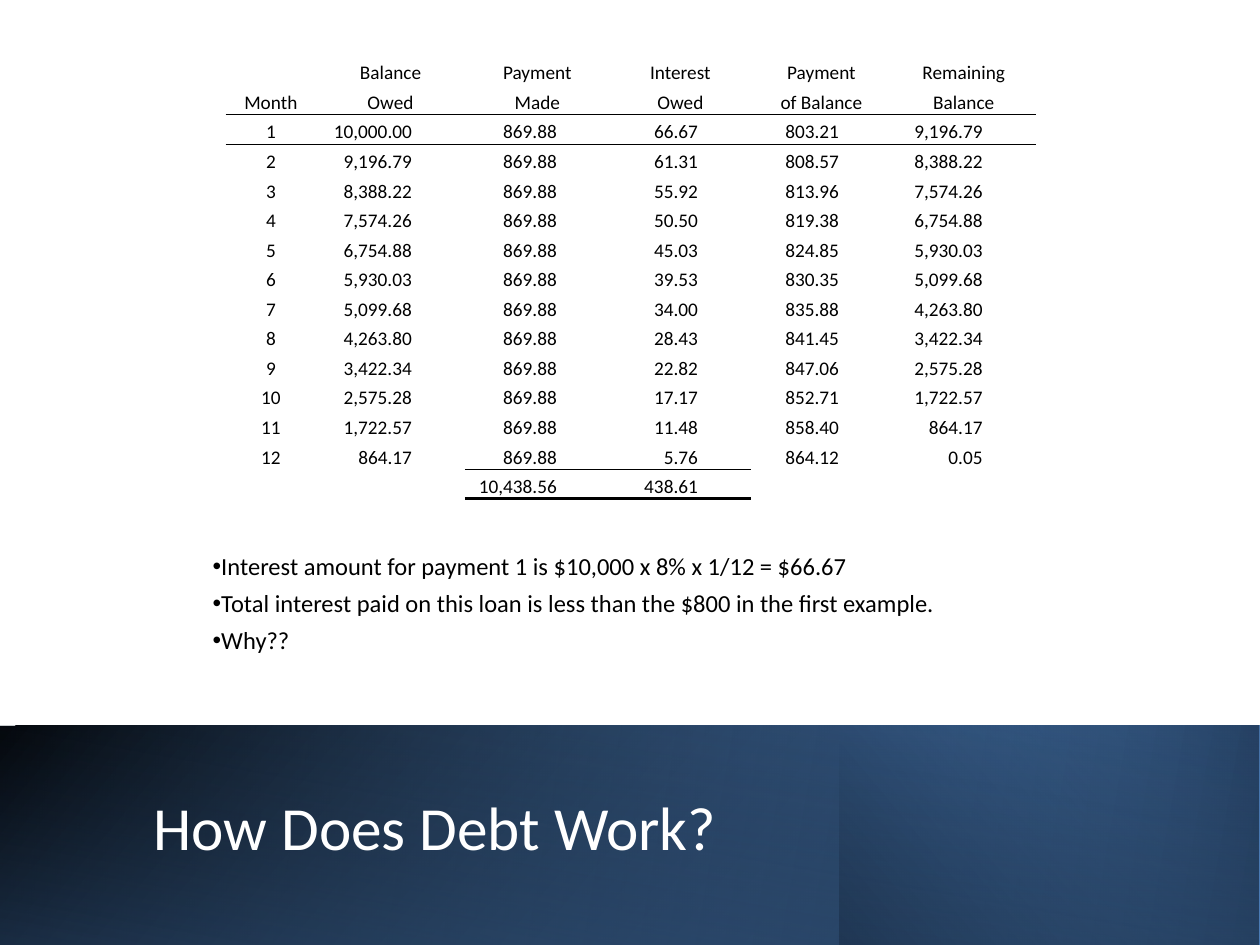
from lxml.etree import SubElement
from pptx import Presentation
from pptx.dml.color import RGBColor
from pptx.enum.shapes import MSO_SHAPE
from pptx.enum.text import MSO_ANCHOR, PP_ALIGN
from pptx.oxml.ns import qn
from pptx.util import Inches, Pt


def color(hex_value):
    return RGBColor.from_string(hex_value)


def apply_format(target, values):
    for name, value in values.items():
        setattr(target, name, value)


presentation = Presentation()
apply_format(presentation, {"slide_width": Inches(10), "slide_height": Inches(7.5)})
slide = presentation.slides.add_slide(presentation.slide_layouts[6])
column = presentation.slide_width / 100
row = presentation.slide_height / 100

bands = [
    ((0, 76.8, 100, 23.2), 0, 140, [(0, "000000", 100), (1, "4F81BD", 100)]),
    ((0, 76.8, 99.9, 23.2), 0, 170, [(0, "4F81BD", 0), (1, "254061", 100)]),
    ((66.6, 76.8, 33.4, 23.2), 0, 220, [(0, "254061", 100), (1, "4F81BD", 0)]),
    ((-0.1, 76.8, 100, 23.3), 180, 280, [(0, "000000", 0), (0.99, "254061", 55)]),
]
for (left, top, width, height), rotation, angle, stops in bands:
    band = slide.shapes.add_shape(
        MSO_SHAPE.RECTANGLE, int(left * column), int(top * row),
        int(width * column), int(height * row))
    band.shadow.inherit = False
    band.line.fill.background()
    band.rotation = rotation
    if not rotation:
        band._element.spPr.find(qn("a:xfrm")).set("flipH", "1")
    band.fill.gradient()
    band.fill.gradient_angle = 360 - angle
    for stop, (position, hex_value, _) in zip(band.fill.gradient_stops, stops):
        stop.position = position
        stop.color.rgb = color(hex_value)
    colors = band._element.spPr.findall(".//" + qn("a:gs") + "/" + qn("a:srgbClr"))
    for stop_color, (_, _, opacity) in zip(colors, stops):
        if opacity < 100:
            SubElement(stop_color, qn("a:alpha")).set("val", str(opacity * 1000))

texts = [
    ((11.2, 80.4, 81.2, 15.07), 35, "FFFFFF", False, ["How Does Debt Work?"]),
    ((15.9, 55.87, 68.3, 16.27), 14, "000000", True, [
        "Interest amount for payment 1 is $10,000 x 8% x 1/12 = $66.67",
        "Total interest paid on this loan is less than the $800 in the first example.",
        "Why??",
    ]),
]
for (left, top, width, height), size, hex_value, bulleted, lines in texts:
    frame = slide.shapes.add_textbox(
        int(left * column), int(top * row),
        int(width * column), int(height * row)).text_frame
    apply_format(frame, {
        "word_wrap": True, "vertical_anchor": MSO_ANCHOR.MIDDLE, "text": "\n".join(lines)})
    for paragraph in frame.paragraphs:
        paragraph.line_spacing = 0.9
        apply_format(paragraph.runs[0].font, {"name": "Calibri", "size": Pt(size)})
        paragraph.runs[0].font.color.rgb = color(hex_value)
        if bulleted:
            paragraph.space_after = Pt(6)
            properties = paragraph._p.get_or_add_pPr()
            properties.set("marL", "0")
            properties.set("indent", str(-Inches(0.25)))
            SubElement(properties, qn("a:buFont")).set("typeface", "Arial")
            SubElement(properties, qn("a:buChar")).set("char", "•")

balances = [
    "10,000.00", "9,196.79", "8,388.22", "7,574.26", "6,754.88", "5,930.03", "5,099.68",
    "4,263.80", "3,422.34", "2,575.28", "1,722.57", "864.17", "0.05"]
interest = [
    "66.67", "61.31", "55.92", "50.50", "45.03", "39.53",
    "34.00", "28.43", "22.82", "17.17", "11.48", "5.76"]
principal = [
    "803.21", "808.57", "813.96", "819.38", "824.85", "830.35",
    "835.88", "841.45", "847.06", "852.71", "858.40", "864.12"]
headers = [
    ["", "Balance", "Payment", "Interest", "Payment", "Remaining"],
    ["Month", "Owed", "Made", "Owed", "of Balance", "Balance"],
]
months = [
    [str(month + 1), balances[month], "869.88", interest[month],
     principal[month], balances[month + 1]]
    for month in range(12)]
schedule = headers + months + [["", "", "10,438.56", "438.61", "", ""]]

widths = [7.2, 11.8, 11.5, 11.2, 11.2, 11.4]
table = slide.shapes.add_table(
    len(schedule), len(widths), int(17.9 * column), int(5.87 * row),
    int(sum(widths) * column), int(46.95 * row)).table
apply_format(table, {"first_row": False, "horz_banding": False})
table._tbl.tblPr.find(qn("a:tableStyleId")).text = "{2D5ABB26-0587-4C30-8999-92F81FD0307C}"
for table_column, width in zip(table.columns, widths):
    table_column.width = int(width * column)

last = len(schedule) - 1
for rule_row, rule_columns, weight in [(1, range(6), 0.5), (last - 1, (2, 3), 0.5), (last, (2, 3), 2)]:
    for column_index in rule_columns:
        edges = [(rule_row, "a:lnB")] + [(rule_row + 1, "a:lnT")] * (rule_row < last)
        for row_index, edge in edges:
            properties = table.cell(row_index, column_index)._tc.get_or_add_tcPr()
            border = SubElement(properties, qn(edge), w=str(Pt(weight)))
            border_fill = SubElement(border, qn("a:solidFill"))
            SubElement(border_fill, qn("a:srgbClr")).set("val", "000000")

for row_index, entries in enumerate(schedule):
    for column_index, entry in enumerate(entries):
        cell = table.cell(row_index, column_index)
        is_amount = row_index > 1 and column_index > 0
        cell.fill.background()
        apply_format(cell, {
            "margin_left": Inches(0.01), "margin_top": Inches(0.01), "margin_bottom": 0,
            "margin_right": Inches(0.42 if is_amount else 0.01),
            "vertical_anchor": MSO_ANCHOR.BOTTOM})
        paragraph = cell.text_frame.paragraphs[0]
        paragraph.alignment = PP_ALIGN.RIGHT if is_amount else PP_ALIGN.CENTER
        if entry:
            run = paragraph.add_run()
            run.text = entry
            apply_format(run.font, {"name": "Calibri", "size": Pt(11)})
            run.font.color.rgb = color("000000")
        else:
            SubElement(paragraph._p, qn("a:endParaRPr")).set("sz", "1100")

presentation.save("out.pptx")
